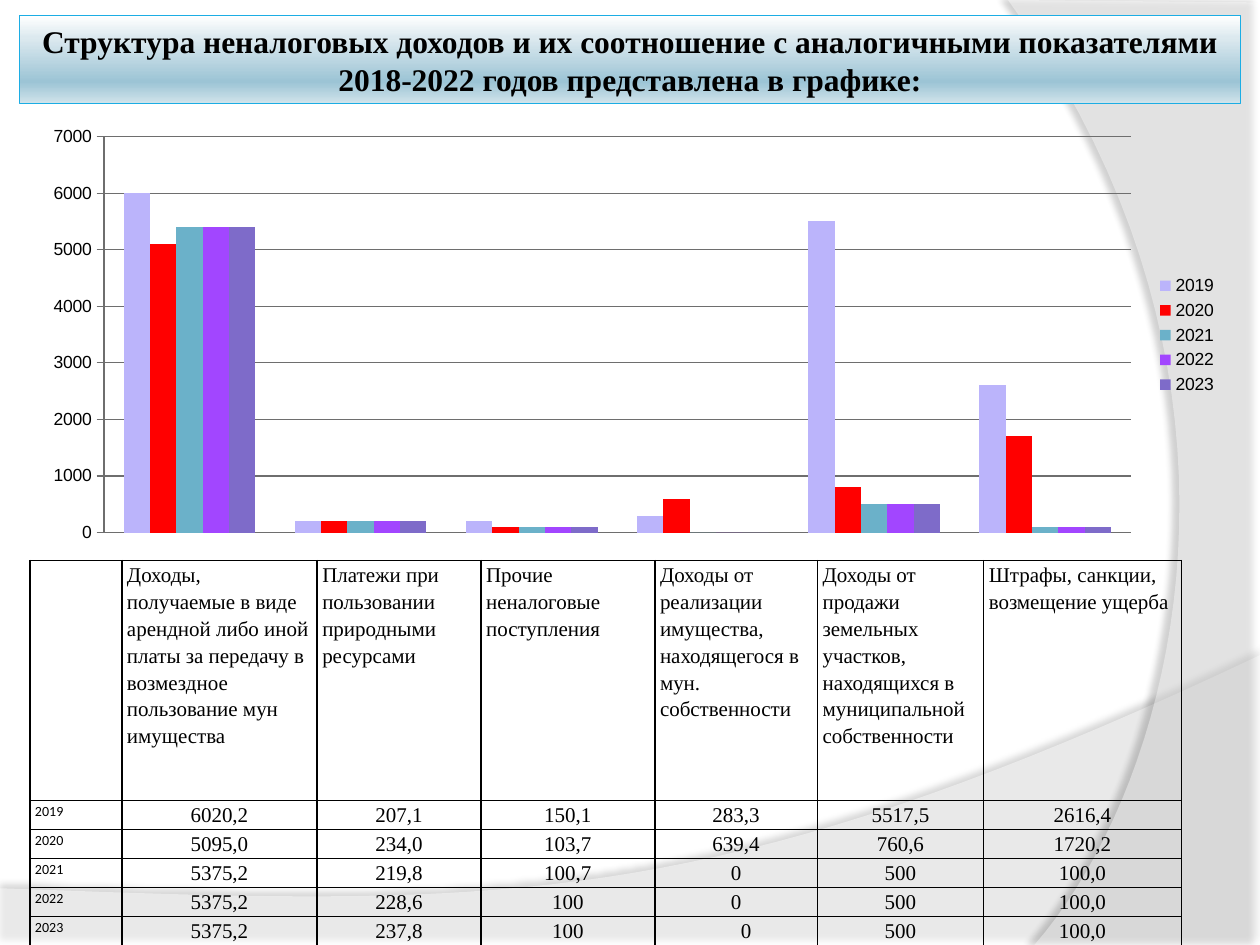
from copy import deepcopy

from lxml.etree import SubElement
from pptx import Presentation
from pptx.chart.data import CategoryChartData
from pptx.dml.color import RGBColor
from pptx.enum.chart import XL_CHART_TYPE as ChartType
from pptx.enum.chart import XL_LEGEND_POSITION as LegendPos
from pptx.enum.chart import XL_TICK_MARK as Tick
from pptx.enum.text import MSO_ANCHOR as Anchor
from pptx.enum.text import PP_ALIGN as Align
from pptx.oxml import parse_xml
from pptx.oxml.ns import nsdecls, qn
from pptx.util import Pt

COLORS = {
    "text": "000000", "white": "FFFFFF", "title_line": "1CADE4", "grid": "6E6E6E",
    "2019": "BBB4FB", "2020": "FF0000", "2021": "6BB1C9", "2022": "A246FF", "2023": "7E6BC9",
}
TITLE_STOPS = [(0, "FFFFFF"), (0.25, "DCE9EF"), (0.75, "9CC4D5"), (1, "D2E4EB")]
TITLE = ("Структура неналоговых доходов и их соотношение с аналогичными "
         "показателями 2018-2022 годов представлена в графике:")
INCOME_TYPES = [
    "Доходы, получаемые в виде арендной либо иной платы за передачу в возмездное "
    "пользование мун имущества",
    "Платежи при пользовании природными ресурсами",
    "Прочие неналоговые поступления",
    "Доходы от реализации имущества, находящегося в мун. собственности",
    "Доходы от продажи земельных участков, находящихся в муниципальной собственности",
    "Штрафы, санкции, возмещение ущерба",
]
INCOME = {
    "2019": ["6020,2", "207,1", "150,1", "283,3", "5517,5", "2616,4"],
    "2020": ["5095,0", "234,0", "103,7", "639,4", "760,6", "1720,2"],
    "2021": ["5375,2", "219,8", "100,7", "0", "500", "100,0"],
    "2022": ["5375,2", "228,6", "100", "0", "500", "100,0"],
    "2023": ["5375,2", "237,8", "100", "0", "500", "100,0"],
}
COLUMN_WIDTHS = [52.6, 111.6, 93.6, 99.4, 92.9, 95, 113]
HEADER_HEIGHT, YEAR_HEIGHT = 136.9, 16.4
CHART_WIDTH, CHART_HEIGHT = 686.2, 247.7

FRAME = {"margin_left": Pt(3.6), "margin_right": Pt(3.6),
         "margin_top": Pt(3.6), "margin_bottom": Pt(3.6),
         "vertical_anchor": Anchor.MIDDLE, "word_wrap": True}
CELL = {"margin_left": Pt(3), "margin_right": Pt(3), "margin_top": 0, "margin_bottom": 0}
CELL_PARAGRAPH = {"line_spacing": 1.15, "space_after": Pt(10)}
TITLE_FONT = {"name": "Times New Roman", "size": Pt(18), "bold": True}
CELL_FONT = {"name": "Times New Roman", "size": Pt(12)}
YEAR_FONT = {"name": "Calibri", "size": Pt(8)}
CHART_FONT = {"name": "Arial", "size": Pt(10)}
VALUE_AXIS = {"minimum_scale": 0, "maximum_scale": 7000, "major_unit": 1000,
              "has_major_gridlines": True, "major_tick_mark": Tick.CROSS,
              "minor_tick_mark": Tick.NONE}


def rgb(name):
    return RGBColor.from_string(COLORS[name])


def apply(target, values):
    for attribute, value in values.items():
        setattr(target, attribute, value)


def style_font(font, values):
    apply(font, values)
    font.color.rgb = rgb("text")


def to_hundreds(amount):
    return round(float(amount.replace(",", ".")) / 100) * 100


def curve(start, control1, control2, end, steps=40):
    """Points along a cubic Bezier curve, without its start."""
    points = []
    for step in range(1, steps + 1):
        t = step / steps
        weights = ((1 - t) ** 3, 3 * t * (1 - t) ** 2, 3 * t * t * (1 - t), t ** 3)
        points.append(tuple(sum(w * p[axis] for w, p in
                                zip(weights, (start, control1, control2, end)))
                            for axis in (0, 1)))
    return points


def add_wave(slide, points, opacity, shadow_opacity, distance, direction):
    builder = slide.shapes.build_freeform(*[Pt(v) for v in points[0]], scale=1.0)
    builder.add_line_segments([(Pt(x), Pt(y)) for x, y in points[1:]], close=True)
    wave = builder.convert_to_shape()
    wave.fill.solid()
    wave.fill.fore_color.rgb = rgb("white")
    wave.line.fill.background()
    white = wave._element.spPr.find(qn("a:solidFill"))[0]
    SubElement(white, qn("a:alpha"), val=str(opacity * 1000))
    wave._element.spPr.append(parse_xml(
        f'<a:effectLst {nsdecls("a")}><a:outerShdw blurRad="{Pt(4)}" dist="{Pt(distance)}" '
        f'dir="{direction * 60000}" algn="ctr" rotWithShape="0"><a:srgbClr val="000000">'
        f'<a:alpha val="{shadow_opacity * 1000}"/></a:srgbClr></a:outerShdw></a:effectLst>'))


def add_title(slide):
    title = slide.shapes.add_textbox(Pt(11.2), Pt(9), Pt(697.7), Pt(50.4))
    title.line.color.rgb = rgb("title_line")
    title.line.width = Pt(0.5)
    title.fill.gradient()
    title.fill.gradient_angle = 270
    stop_list = title._element.spPr.find(qn("a:gradFill")).find(qn("a:gsLst"))
    for _ in range(len(TITLE_STOPS) - len(stop_list)):
        stop_list.append(deepcopy(stop_list[0]))
    for stop, (position, color) in zip(title.fill.gradient_stops, TITLE_STOPS):
        stop.position = position
        stop.color.rgb = RGBColor.from_string(color)
    apply(title.text_frame, FRAME)
    heading = title.text_frame.paragraphs[0]
    heading.text = TITLE
    heading.alignment = Align.CENTER
    style_font(heading.runs[0].font, TITLE_FONT)


def fill_cell(cell, text, font, alignment):
    apply(cell, CELL)
    for side in ("lnL", "lnR", "lnT", "lnB"):
        cell._tc.get_or_add_tcPr().append(parse_xml(
            f'<a:{side} {nsdecls("a")} w="{Pt(1)}"><a:solidFill>'
            f'<a:srgbClr val="{COLORS["text"]}"/></a:solidFill></a:{side}>'))
    cell.fill.background()
    paragraph = cell.text_frame.paragraphs[0]
    paragraph.text = text
    paragraph.alignment = alignment
    apply(paragraph, CELL_PARAGRAPH)
    style_font(paragraph.font, font)
    for run in paragraph.runs:
        style_font(run.font, font)


def add_income_table(slide):
    rows = [["", *INCOME_TYPES]] + [[year, *amounts] for year, amounts in INCOME.items()]
    heights = [HEADER_HEIGHT] + [YEAR_HEIGHT] * len(INCOME)
    table = slide.shapes.add_table(len(rows), len(COLUMN_WIDTHS), Pt(17), Pt(320.4),
                                   Pt(sum(COLUMN_WIDTHS)), Pt(sum(heights))).table
    apply(table, {"first_row": False, "horz_banding": False})
    for column, width in zip(table.columns, COLUMN_WIDTHS):
        column.width = Pt(width)
    for r, (texts, height) in enumerate(zip(rows, heights)):
        table.rows[r].height = Pt(height)
        for c, text in enumerate(texts):
            is_amount = r > 0 and c > 0
            fill_cell(table.cell(r, c), text, YEAR_FONT if c == 0 else CELL_FONT,
                      Align.CENTER if is_amount else Align.LEFT)
    # The last property sale amount is indented
    last_sale = table.cell(len(rows) - 1, 4).text_frame.paragraphs[0]
    last_sale._p.get_or_add_pPr().set("indent", str(Pt(11.5)))


def add_income_chart(slide):
    data = CategoryChartData()
    data.categories = [str(n + 1) for n in range(len(INCOME_TYPES))]
    for year, amounts in INCOME.items():
        data.add_series(year, [to_hundreds(amount) for amount in amounts])
    chart = slide.shapes.add_chart(ChartType.COLUMN_CLUSTERED, Pt(16.6), Pt(67.7),
                                   Pt(CHART_WIDTH), Pt(CHART_HEIGHT), data).chart
    style_font(chart.font, CHART_FONT)
    apply(chart, {"has_title": False, "has_legend": True})
    apply(chart.legend, {"position": LegendPos.RIGHT, "include_in_layout": False})
    apply(chart.plots[0], {"gap_width": 150, "overlap": 0, "vary_by_categories": False})
    for series in chart.plots[0].series:
        series.format.fill.solid()
        series.format.fill.fore_color.rgb = rgb(series.name)

    # Axes
    chart.category_axis.visible = False
    amounts_axis = chart.value_axis
    apply(amounts_axis, VALUE_AXIS)
    amounts_axis.tick_labels.number_format = "General"
    amounts_axis.tick_labels.number_format_is_linked = False
    for part in (amounts_axis, amounts_axis.major_gridlines):
        part.format.line.color.rgb = rgb("grid")
        part.format.line.width = Pt(0.75)

    # Fixed plot area, as shares of the chart
    plot_area = chart._chartSpace.chart.plotArea
    for old in plot_area.findall(qn("c:layout")):
        plot_area.remove(old)
    marks = {"layoutTarget": "inner", "xMode": "edge", "yMode": "edge",
             "x": 42.8 / CHART_WIDTH, "y": 10.4 / CHART_HEIGHT,
             "w": 586.8 / CHART_WIDTH, "h": 226.3 / CHART_HEIGHT}
    inner = "".join(f'<c:{tag} val="{value}"/>' for tag, value in marks.items())
    plot_area.insert(0, parse_xml(
        f'<c:layout {nsdecls("c")}><c:manualLayout>{inner}</c:manualLayout></c:layout>'))


def main():
    deck = Presentation()
    deck.slide_width, deck.slide_height = Pt(720), Pt(540)
    slide = deck.slides.add_slide(deck.slide_layouts[6])

    # Background waves
    bottom = [(0, 507.6), (0, 540), (720, 540), (720, 374.4)]
    bottom += curve(bottom[-1], (402.5, 524.9), (281.5, 517.7), bottom[0])[:-1]
    add_wave(slide, bottom, 45, 35, 3.5, 270)
    right = [(720, 1.4), (720, 540), (591.1, 540)]
    right += curve(right[-1], (673.2, 445.7), (733, 216), (576, 0))
    add_wave(slide, right, 40, 45, 4, 180)

    # Content
    add_title(slide)
    add_income_table(slide)
    add_income_chart(slide)
    deck.save("out.pptx")


if __name__ == "__main__":
    main()
